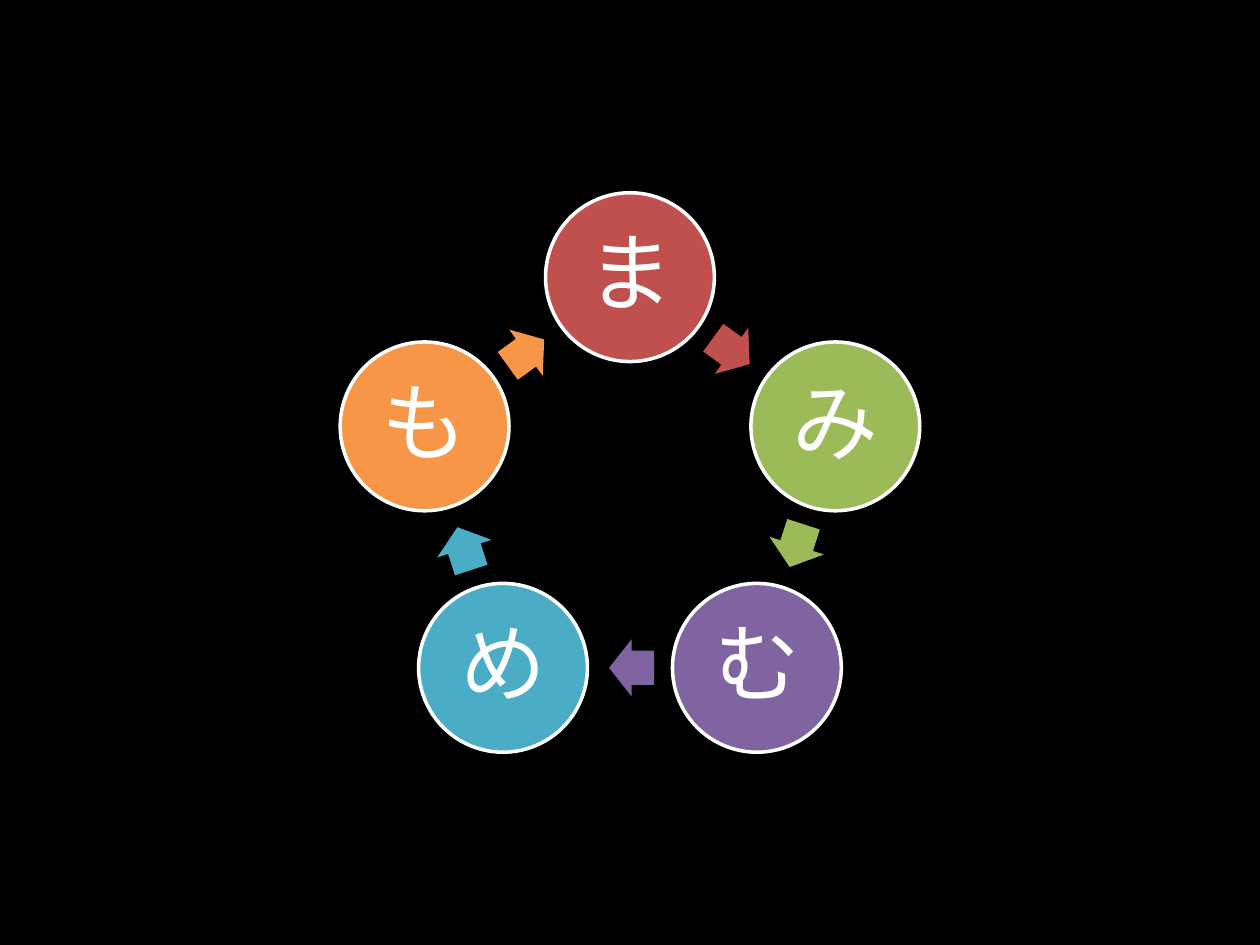
from math import cos, radians, sin

from pptx import Presentation
from pptx.dml.color import RGBColor
from pptx.enum.shapes import MSO_SHAPE
from pptx.enum.text import MSO_ANCHOR, PP_ALIGN
from pptx.util import Pt

OVAL = MSO_SHAPE.OVAL
ARROW = MSO_SHAPE.RIGHT_ARROW
MIDDLE = MSO_ANCHOR.MIDDLE
CENTER = PP_ALIGN.CENTER

STEPS = [
    ("ま", "C0504D"),
    ("み", "9BBB59"),
    ("む", "8064A2"),
    ("め", "4BACC6"),
    ("も", "F79646"),
]
BACKGROUND = "000000"
WHITE = "FFFFFF"

SLIDE_WIDTH, SLIDE_HEIGHT = 720, 540
CYCLE_X, CYCLE_Y = 360, 281.8
CYCLE_RADIUS = 123.4
CIRCLE_SIZE = 96.5
ARROW_LENGTH, ARROW_WIDTH = 25.7, 32.6
ARROW_SETBACK = 0.9
TEXT_INSET = 5


def color(hex_value):
    return RGBColor.from_string(hex_value)


def point_on_ring(angle, radius):
    return (CYCLE_X + radius * sin(radians(angle)),
            CYCLE_Y - radius * cos(radians(angle)))


def add_centered(slide, kind, center, width, height, fill):
    x, y = center
    shape = slide.shapes.add_shape(
        kind, Pt(x - width / 2), Pt(y - height / 2), Pt(width), Pt(height))
    shape.shadow.inherit = False
    shape.fill.solid()
    shape.fill.fore_color.rgb = color(fill)
    return shape


def write_text(shape, text, size, font, text_color, line_spacing, space_after):
    frame = shape.text_frame
    frame.word_wrap = True
    frame.vertical_anchor = MIDDLE
    frame.margin_left = frame.margin_right = Pt(TEXT_INSET)
    frame.margin_top = frame.margin_bottom = Pt(TEXT_INSET)
    paragraph = frame.paragraphs[0]
    paragraph.alignment = CENTER
    paragraph.line_spacing = line_spacing
    paragraph.space_after = Pt(space_after)
    run = paragraph.add_run()
    run.text = text
    run.font.size = Pt(size)
    run.font.name = font
    run.font.color.rgb = color(text_color)


def add_circle(slide, text, fill, angle):
    circle = add_centered(slide, OVAL, point_on_ring(angle, CYCLE_RADIUS),
                          CIRCLE_SIZE, CIRCLE_SIZE, fill)
    circle.line.color.rgb = color(WHITE)
    circle.line.width = Pt(2)
    write_text(circle, text, size=49, font="Calibri", text_color=WHITE,
               line_spacing=0.9, space_after=17)


def add_arrow(slide, fill, angle, half_step):
    middle_angle = angle + half_step
    x, y = point_on_ring(middle_angle, CYCLE_RADIUS * cos(radians(half_step)))
    center = (x - ARROW_SETBACK * cos(radians(middle_angle)),
              y - ARROW_SETBACK * sin(radians(middle_angle)))
    arrow = add_centered(slide, ARROW, center, ARROW_LENGTH, ARROW_WIDTH, fill)
    arrow.line.fill.background()
    arrow.adjustments[0] = 0.6
    arrow.adjustments[1] = 0.5
    arrow.rotation = middle_angle


def main():
    presentation = Presentation()
    presentation.slide_width = Pt(SLIDE_WIDTH)
    presentation.slide_height = Pt(SLIDE_HEIGHT)
    slide = presentation.slides.add_slide(presentation.slide_layouts[6])
    slide.background.fill.solid()
    slide.background.fill.fore_color.rgb = color(BACKGROUND)

    step_angle = 360 / len(STEPS)
    for index, (text, fill) in enumerate(STEPS):
        angle = index * step_angle
        add_circle(slide, text, fill, angle)
        add_arrow(slide, fill, angle, step_angle / 2)

    presentation.save("out.pptx")


if __name__ == "__main__":
    main()
